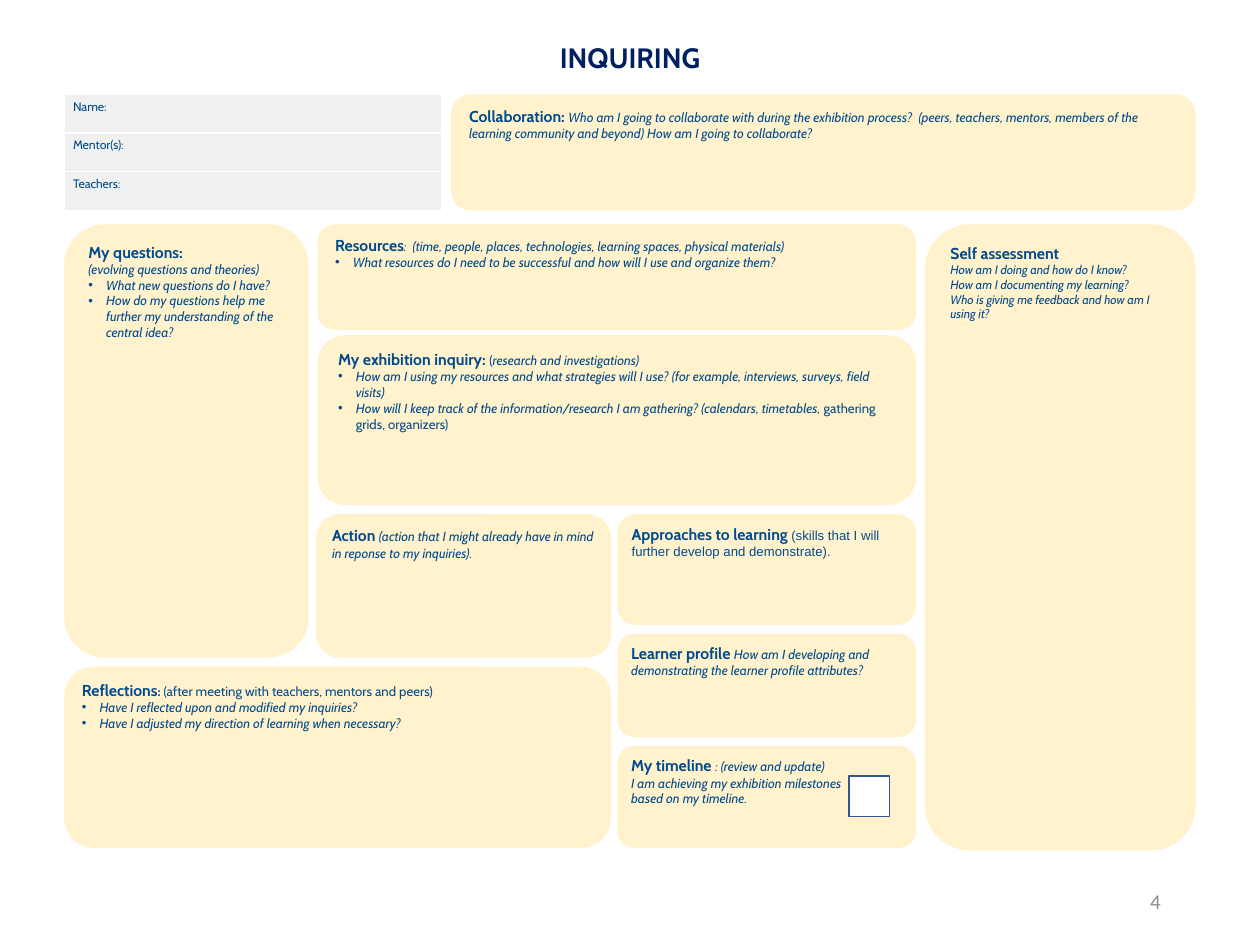
from dataclasses import dataclass
from typing import NamedTuple

from lxml.etree import SubElement
from pptx import Presentation
from pptx.dml.color import RGBColor
from pptx.enum.shapes import MSO_SHAPE as Shape
from pptx.enum.text import MSO_ANCHOR as Anchor, PP_ALIGN as Align
from pptx.oxml.ns import qn
from pptx.util import Inches, Pt

COLORS = {
    "title": "002060",
    "text": "004B8D",
    "panel": "FFF2CC",
    "field": "F0F0F0",
    "white": "FFFFFF",
    "checkbox": "325491",
    "number": "8C8C8C",
}
WIDE, TIGHT = (0.1, 0.05), (0.07, 0.04)
LEFT, TOP, MIDDLE, SPLIT, RIGHT = 0.51, 1.78, 2.52, 4.9, 7.34


class Run(NamedTuple):
    text: str
    size: float = 7.5
    bold: bool = False
    italic: bool = True
    font: str = "Cabin"
    color: str = "text"


class Para(NamedTuple):
    runs: list[Run]
    bullet: bool = False
    align: Align = Align.LEFT


@dataclass
class Panel:
    left: float
    top: float
    width: float
    height: float
    paras: list[Para]
    inset: tuple[float, float] = WIDE


def head(text: str, *runs: Run) -> Para:
    return Para([Run(text, 9, True, False), *runs])


def line(text: str, size: float = 7.5) -> Para:
    return Para([Run(text, size)])


def bullet(text: str, *runs: Run) -> Para:
    return Para([Run(text), *runs], True)


PANELS = [
    Panel(3.58, 0.75, 5.91, 0.92, [
        head("Collaboration: ", Run(
            "Who am I going to collaborate with during the exhibition process?\u00a0 "
            "(peers, teachers, mentors, members of the learning community and beyond) "
            "How am I going to collaborate?"))]),
    Panel(LEFT, TOP, 1.94, 3.44, [
        head("My questions:"),
        line("(evolving questions and theories)"),
        bullet("What new questions do I have?"),
        bullet("How do my questions help me further my understanding of the central idea?")]),
    Panel(MIDDLE, TOP, 4.75, 0.84, [
        head("Resources", Run(
            ":  (time, people, places, technologies, learning spaces, physical materials)")),
        bullet("What resources do I need to be successful and how will I use and organize them?")]),
    Panel(MIDDLE, 2.66, 4.75, 1.35, [
        head("My exhibition inquiry: ", Run("(", italic=False),
             Run("research and investigations)\u00a0")),
        bullet("How am I using my resources and what strategies will I use? "
               "(for example, interviews, surveys, field visits)"),
        bullet("How will I keep track of the information/research I am gathering? "
               "(calendars, timetables, ", Run("gathering grids, organizers)", italic=False))]),
    Panel(2.51, 4.08, 2.34, 1.14, [
        head("Action ", Run(
            "(action that I might already have in mind in reponse to my inquiries)."))], TIGHT),
    Panel(RIGHT, TOP, 2.15, 4.97, [
        head("Self assessment"),
        line("How am I doing and how do I know?", 7),
        line("How am I documenting my learning?", 7),
        line("Who is giving me feedback and how am I using it?", 7)]),
    Panel(SPLIT, 4.08, 2.37, 0.88, [
        head("Approaches to learning ", Run(
            "(skills that I will further develop\u00a0and demonstrate).",
            italic=False, font="Arial"))], TIGHT),
    Panel(SPLIT, 5.03, 2.37, 0.82, [
        head("Learner profile ", Run(
            "How am I developing and demonstrating the learner profile attributes?"))], TIGHT),
    Panel(SPLIT, 5.92, 2.37, 0.81, [
        head("My timeline ", Run(": (review and update)\u00a0")),
        line("I am achieving my exhibition milestones"),
        line("based on my timeline.")], TIGHT),
    Panel(LEFT, 5.29, 4.34, 1.44, [
        head("Reflections", Run(": ", bold=True, italic=False),
             Run("(after meeting with teachers, mentors and peers)", italic=False)),
        bullet("Have I reflected upon and modified my inquiries?"),
        bullet("Have I adjusted my direction of learning when necessary?")], TIGHT),
]


def rgb(name: str) -> RGBColor:
    return RGBColor.from_string(COLORS[name])


def write(tf, paras: list[Para]) -> None:
    for i, para in enumerate(paras):
        p = tf.add_paragraph() if i else tf.paragraphs[0]
        p.alignment = para.align
        if para.bullet:
            pPr = p._p.get_or_add_pPr()
            pPr.set("marL", str(Inches(0.14)))
            pPr.set("indent", str(-Inches(0.14)))
            SubElement(pPr, qn("a:buFont"), typeface="Arial")
            SubElement(pPr, qn("a:buChar"), char="•")
        for run in para.runs:
            r = p.add_run()
            r.text = run.text
            r.font.size = Pt(run.size)
            r.font.bold, r.font.italic = run.bold, run.italic
            r.font.name = run.font
            r.font.color.rgb = rgb(run.color)


def add_box(s, kind: Shape, left: float, top: float, width: float, height: float, fill: str):
    sp = s.shapes.add_shape(kind, Inches(left), Inches(top), Inches(width), Inches(height))
    sp.shadow.inherit = False
    sp.fill.solid()
    sp.fill.fore_color.rgb = rgb(fill)
    sp.line.fill.background()
    return sp


def add_panel(s, panel: Panel) -> None:
    sp = add_box(s, Shape.ROUNDED_RECTANGLE, panel.left, panel.top,
                 panel.width, panel.height, "panel")
    tf = sp.text_frame
    tf.word_wrap = True
    tf.vertical_anchor = Anchor.TOP
    tf.margin_left = tf.margin_right = Inches(panel.inset[0])
    tf.margin_top = tf.margin_bottom = Inches(panel.inset[1])
    write(tf, panel.paras)


def add_label(s, left: float, top: float, width: float, height: float,
              run: Run, align: Align, anchor: Anchor) -> None:
    sp = s.shapes.add_textbox(Inches(left), Inches(top), Inches(width), Inches(height))
    tf = sp.text_frame
    tf.word_wrap = True
    tf.vertical_anchor = anchor
    write(tf, [Para([run], align=align)])


def add_fields(s, labels: list[str]) -> None:
    table = s.shapes.add_table(len(labels), 1, Inches(LEFT), Inches(0.75),
                               Inches(3), Inches(0.92)).table
    table.first_row = table.horz_banding = False
    for i, label in enumerate(labels):
        cell = table.cell(i, 0)
        cell.margin_left = cell.margin_right = Inches(TIGHT[0])
        cell.margin_top = cell.margin_bottom = Inches(TIGHT[1])
        write(cell.text_frame, [Para([Run(label, 7, italic=False)])])
        tcPr = cell._tc.get_or_add_tcPr()
        for side in ("lnL", "lnR", "lnT", "lnB"):
            ln = SubElement(tcPr, qn(f"a:{side}"), w=str(Pt(1)))
            SubElement(SubElement(ln, qn("a:solidFill")), qn("a:srgbClr"), val=COLORS["white"])
        cell.fill.solid()
        cell.fill.fore_color.rgb = rgb("field")


def main() -> None:
    prs = Presentation()
    prs.slide_width, prs.slide_height = Inches(10), Inches(7.5)
    s = prs.slides.add_slide(prs.slide_layouts[6])
    add_label(s, 7.06, 6.95, 2.25, 0.4, Run("4", 12, False, False, "Calibri", "number"),
              Align.RIGHT, Anchor.MIDDLE)
    add_label(s, 0, 0.27, 10, 0.37, Run("INQUIRING", 16, True, False, color="title"),
              Align.CENTER, Anchor.TOP)
    for panel in PANELS:
        add_panel(s, panel)
    add_fields(s, ["Name:", "Mentor(s):", "Teachers:"])
    checkbox = add_box(s, Shape.RECTANGLE, 6.74, 6.16, 0.32, 0.32, "white")
    checkbox.line.color.rgb = rgb("checkbox")
    checkbox.line.width = Pt(1)
    prs.save("out.pptx")


if __name__ == "__main__":
    main()
